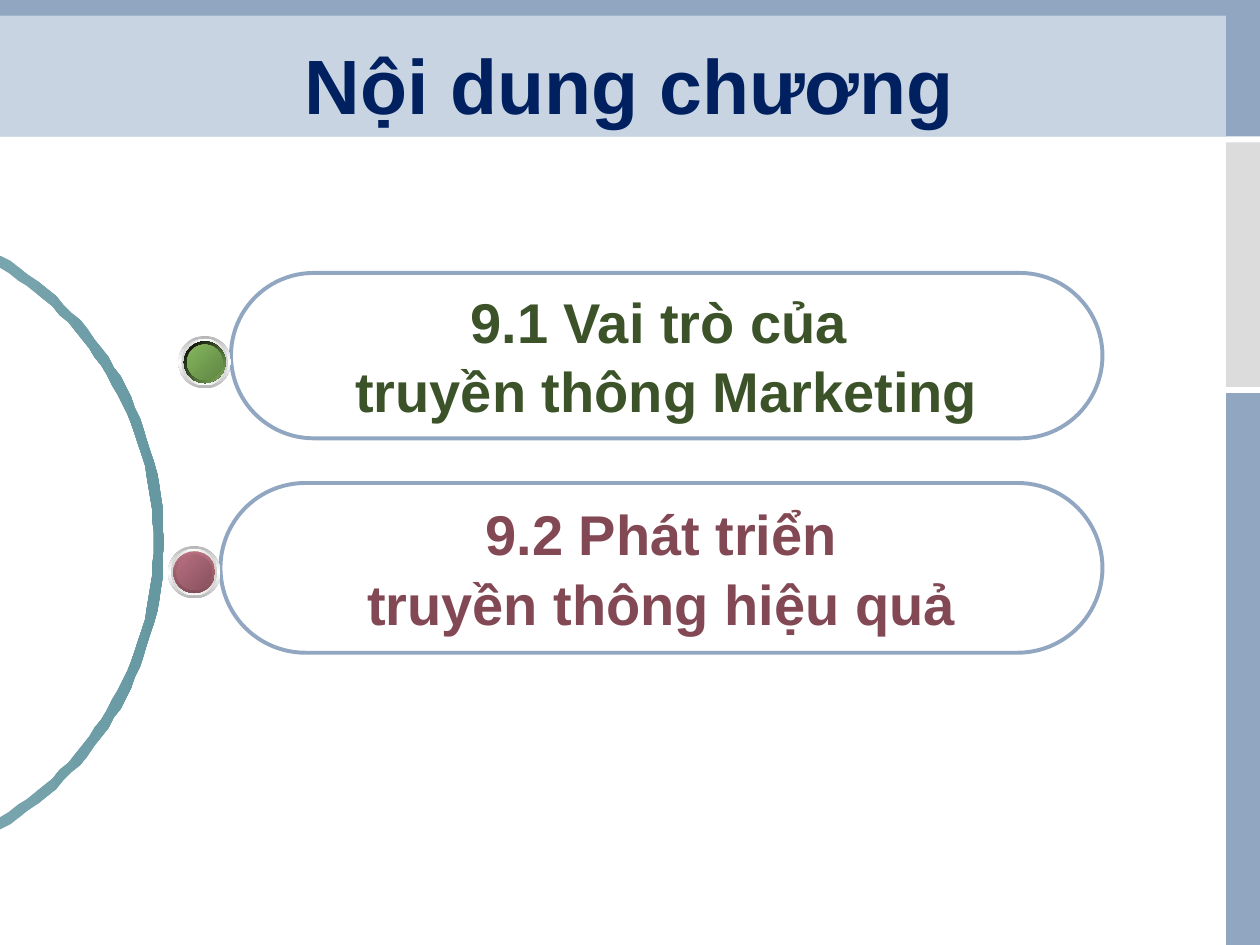
from math import acos, cos, sin

from lxml import etree
from pptx import Presentation
from pptx.dml.color import RGBColor
from pptx.enum.shapes import MSO_SHAPE
from pptx.enum.text import MSO_ANCHOR, PP_ALIGN
from pptx.oxml.ns import qn
from pptx.util import Pt

RECTANGLE = MSO_SHAPE.RECTANGLE
PILL = MSO_SHAPE.ROUNDED_RECTANGLE
OVAL = MSO_SHAPE.OVAL
CENTER = PP_ALIGN.CENTER
MIDDLE = MSO_ANCHOR.MIDDLE

WIDTH, HEIGHT = 720, 540
BLUE, PALE_BLUE, GREY = "91A7C1", "C8D4E2", "DCDCDC"
ARC_STEPS = 60


def color(value):
    return RGBColor.from_string(value)


def set_gradient(shape, stops, angle):
    shape.fill.background()
    properties = shape._element.spPr
    gradient = etree.Element(qn("a:gradFill"), rotWithShape="1")
    stop_list = etree.SubElement(gradient, qn("a:gsLst"))
    for index, value in enumerate(stops):
        position = str(100000 * index // (len(stops) - 1))
        stop = etree.SubElement(stop_list, qn("a:gs"), pos=position)
        etree.SubElement(stop, qn("a:srgbClr"), val=value)
    etree.SubElement(gradient, qn("a:lin"), ang=str(angle * 60000), scaled="0")
    properties.replace(properties.find(qn("a:noFill")), gradient)


def add_plain(shapes, kind, box):
    shape = shapes.add_shape(kind, *(Pt(length) for length in box))
    shape.shadow.inherit = False
    shape.line.fill.background()
    return shape


def write_lines(frame, lines, size, text_color, gap=0):
    frame.vertical_anchor = MIDDLE
    formats = {"name": "Arial", "size": Pt(size), "bold": True}
    for index, line in enumerate(lines):
        para = frame.add_paragraph() if index else frame.paragraphs[0]
        para.alignment = CENTER
        para.space_before = Pt(gap if index else 0)
        span = para.add_run()
        span.text = line
        for name, value in formats.items():
            setattr(span.font, name, value)
        span.font.color.rgb = color(text_color)


def add_frame(page, box):
    left, top, width, height = box
    side, band = 19.4, 78
    inner = width - side
    parts = [
        ((inner, 81.4, side, 139.7), GREY),
        ((inner, 224.6, side, height - 224.6), BLUE),
        ((left, top, width, band), BLUE),
        ((left, 9, inner, 69), PALE_BLUE),
    ]
    for part, fill in parts:
        shape = add_plain(page.shapes, RECTANGLE, part)
        shape.fill.solid()
        shape.fill.fore_color.rgb = color(fill)


def add_title(page, box):
    title = page.shapes.title
    page.shapes._spTree.append(title._element)
    for name, length in zip(("left", "top", "width", "height"), box):
        setattr(title, name, Pt(length))
    write_lines(title.text_frame, ["Nội dung chương"], 44, "002060")


def arc_points(center, radii):
    limit = acos(-center[0] / radii[0])
    angles = (limit * (2 * step / ARC_STEPS - 1) for step in range(ARC_STEPS + 1))
    return [(center[0] + radii[0] * cos(angle), center[1] + radii[1] * sin(angle))
            for angle in angles]


def add_arc(page, center, radii, thickness):
    outer = arc_points(center, radii)
    inner = arc_points(center, [radius - thickness for radius in radii])
    outline = outer + inner[::-1]
    builder = page.shapes.build_freeform(*outline[0], scale=Pt(1))
    builder.add_line_segments(outline[1:], close=True)
    arc = builder.convert_to_shape()
    arc.shadow.inherit = False
    arc.line.fill.background()
    set_gradient(arc, ["78A4AD", "6698A2"], 0)


def add_pill(page, box, lines, text_color):
    pill = add_plain(page.shapes, PILL, box)
    pill.adjustments[0] = 0.5
    pill.fill.background()
    pill.line.color.rgb = color(BLUE)
    pill.line.width = Pt(2.25)
    pill.text_frame.word_wrap = False
    write_lines(pill.text_frame, lines, 32, text_color, gap=1.5)


def add_bead(page, box, shade, core):
    left, top, size = box
    layers = [
        (30, ["B6B6B6", "FFFFFF", "B6B6B6"], 90),
        (26.6, ["D1D1D1", "FFFFFF", "D1D1D1"], 0),
        (23.8, ["FFFFFF", "B88A68", "FFFFFF"], 45),
        (23.8, *shade),
        (20.2, ["8D6A50", "B88A68", "8D6A50"], 315),
        (20.2, core, 45),
    ]
    group = page.shapes.add_group_shape()
    for diameter, stops, angle in layers:
        inset = (size - diameter) / 2
        oval = add_plain(group.shapes, OVAL,
                         (left + inset, top + inset, diameter, diameter))
        set_gradient(oval, stops, angle)


def main():
    deck = Presentation()
    deck.slide_width, deck.slide_height = Pt(WIDTH), Pt(HEIGHT)
    page = deck.slides.add_slide(deck.slide_layouts[5])
    add_frame(page, (0, 0, WIDTH, HEIGHT))
    add_title(page, (36, 16.5, 648, 62.6))
    add_arc(page, (-94, 310), (187.6, 189.4), 5.7)
    add_pill(page, (126, 276, 504, 97),
             ["9.2 Phát triển", "truyền thông hiệu quả"], "824854")
    add_pill(page, (132, 156, 498, 94.5),
             ["9.1 Vai trò của ", "truyền thông Marketing"], "3C532A")
    add_bead(page, (102, 192, 30), (["000000", "84B75D"], 45), ["84B75D", "608644"])
    add_bead(page, (96, 312, 30), (["B96F81", "844F5C"], 90), ["B96F81", "87515E"])
    deck.save("out.pptx")


if __name__ == "__main__":
    main()
